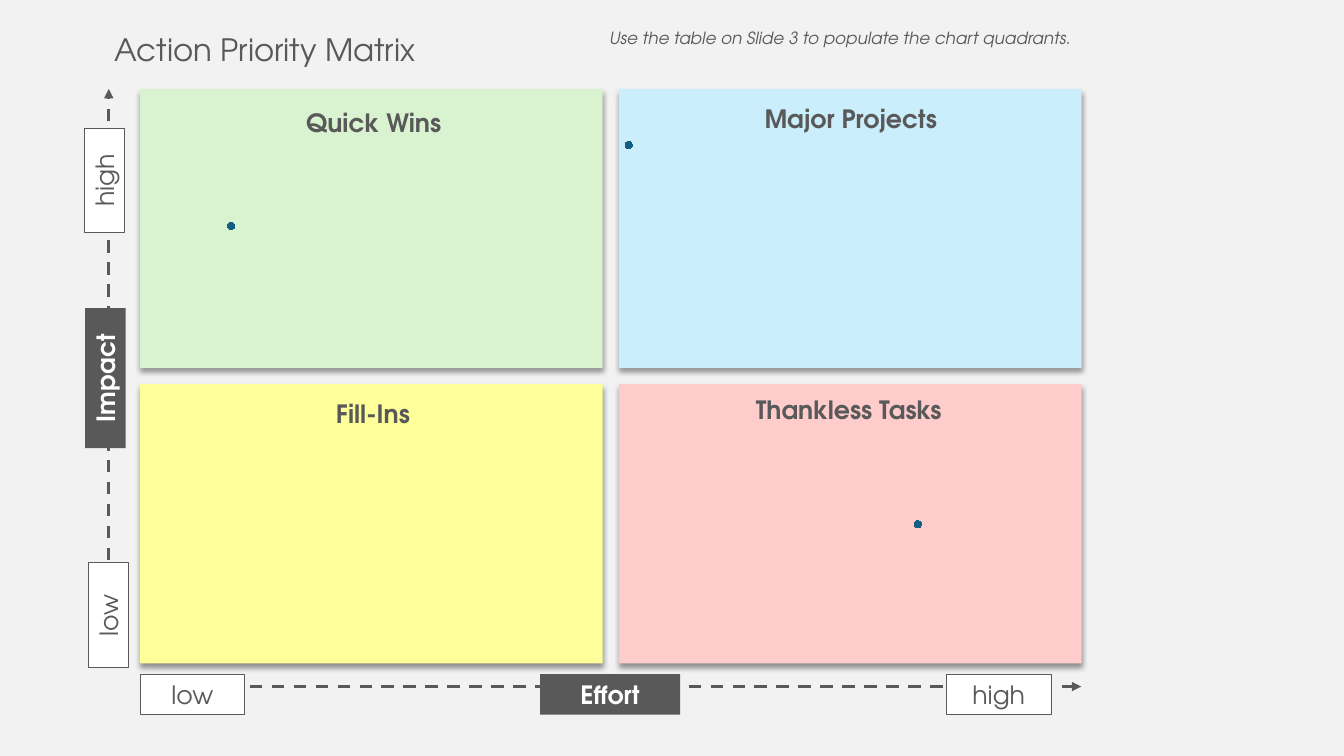
"""Build the Action Priority Matrix slide."""
from lxml import etree
from pptx import Presentation
from pptx.chart.data import XyChartData
from pptx.dml.color import RGBColor
from pptx.enum.chart import XL_CHART_TYPE, XL_MARKER_STYLE
from pptx.enum.dml import MSO_LINE
from pptx.enum.shapes import MSO_CONNECTOR, MSO_SHAPE
from pptx.enum.text import MSO_ANCHOR, MSO_AUTO_SIZE, PP_ALIGN
from pptx.oxml import parse_xml
from pptx.oxml.ns import qn
from pptx.util import Cm, Pt

LEFT, CENTER, RIGHT = PP_ALIGN.LEFT, PP_ALIGN.CENTER, PP_ALIGN.RIGHT
MIDDLE, GROW = MSO_ANCHOR.MIDDLE, MSO_AUTO_SIZE.SHAPE_TO_FIT_TEXT
RECT, STRAIGHT, DASH = MSO_SHAPE.RECTANGLE, MSO_CONNECTOR.STRAIGHT, MSO_LINE.DASH
SCATTER, CIRCLE = XL_CHART_TYPE.XY_SCATTER, XL_MARKER_STYLE.CIRCLE
FONT = "TeX Gyre Adventor"
COLORS = {
    "back": "F2F2F2", "dark": "595959", "white": "FFFFFF", "black": "000000",
    "green": "D9F2D0", "yellow": "FFFF99", "blue": "CAEEFB", "pink": "FFCCCC",
    "dot": "156082",
}
SHADOW = (
    '<a:effectLst xmlns:a="http://schemas.openxmlformats.org/drawingml/2006/main">'
    '<a:outerShdw blurRad="50800" dist="38100" dir="5400000" algn="t" rotWithShape="0">'
    f'<a:srgbClr val="{COLORS["black"]}"><a:alpha val="40000"/></a:srgbClr>'
    '</a:outerShdw></a:effectLst>'
)


def rgb(name):
    return RGBColor.from_string(COLORS[name])


def write(sp, text, align, color="dark", **formats):
    tf = sp.text_frame
    tf.word_wrap = True
    tf.auto_size = GROW
    p = tf.paragraphs[0]
    p.alignment = align
    r = p.add_run()
    r.text = text
    r.font.color.rgb = rgb(color)
    for name, value in {"name": FONT, "size": Pt(18), **formats}.items():
        setattr(r.font, name, value)


prs = Presentation()
prs.slide_width, prs.slide_height = Cm(33.87), Cm(19.05)
s = prs.slides.add_slide(prs.slide_layouts[6])
s.background.fill.solid()
s.background.fill.fore_color.rgb = rgb("back")

quadrants = [
    (3.53, 2.24, "green"), (3.53, 9.68, "yellow"),
    (15.6, 2.24, "blue"), (15.6, 9.68, "pink"),
]
for x, y, color in quadrants:
    sp = s.shapes.add_shape(RECT, Cm(x), Cm(y), Cm(11.66), Cm(7.04))
    sp.fill.solid()
    sp.fill.fore_color.rgb = rgb(color)
    sp.line.fill.background()
    sp._element.spPr.append(parse_xml(SHADOW))

texts = [
    (2.64, 0.64, 9.65, 1.19, "Action Priority Matrix", LEFT, {"size": Pt(22)}),
    (3.91, 2.59, 11.02, 1.02, "Quick Wins", CENTER, {"bold": True}),
    (15.93, 2.49, 11.02, 1.02, "Major Projects", CENTER, {"bold": True}),
    (3.89, 9.91, 11.02, 1.02, "Fill-Ins", CENTER, {"bold": True}),
    (15.88, 9.8, 11.02, 1.02, "Thankless Tasks", CENTER, {"bold": True}),
    (11.91, 0.58, 15.34, 0.76, "Use the table on Slide 3 to populate the chart quadrants.",
     RIGHT, {"size": Pt(12), "italic": True}),
]
for x, y, w, h, text, align, formats in texts:
    sp = s.shapes.add_textbox(Cm(x), Cm(y), Cm(w), Cm(h))
    write(sp, text, align, **formats)

for x1, y1, x2, y2 in [(2.74, 16.33, 2.74, 2.24), (3.53, 17.3, 27.25, 17.3)]:
    arrow = s.shapes.add_connector(STRAIGHT, Cm(x1), Cm(y1), Cm(x2), Cm(y2))
    arrow.line.color.rgb = rgb("dark")
    arrow.line.width = Pt(2.25)
    arrow.line.dash_style = DASH
    etree.SubElement(arrow.line._get_or_add_ln(), qn("a:tailEnd"), type="triangle")
    etree.SubElement(arrow._element.spPr, qn("a:effectLst"))

labels = [
    (13.61, 16.99, 3.53, 0, "Effort", True),
    (0.89, 9.02, 3.53, 270, "Impact", True),
    (1.42, 14.99, 2.64, 270, "low", False),
    (1.32, 4.04, 2.64, 270, "high", False),
    (3.53, 16.99, 2.64, 0, "low", False),
    (23.85, 16.99, 2.64, 0, "high", False),
]
for x, y, w, angle, text, is_name in labels:
    sp = s.shapes.add_shape(RECT, Cm(x), Cm(y), Cm(w), Cm(1.02))
    sp.rotation = angle
    sp.shadow.inherit = False
    sp.fill.solid()
    sp.fill.fore_color.rgb = rgb("dark" if is_name else "white")
    if is_name:
        sp.line.fill.background()
    else:
        sp.line.color.rgb = rgb("dark")
        sp.line.width = Pt(0.75)
    sp.text_frame.vertical_anchor = MIDDLE
    write(sp, text, CENTER, "white" if is_name else "dark", bold=is_name)

data = XyChartData()
points = data.add_series("Series 1")
for effort, impact in [(0.7, 84), (1.8, 100), (2.6, 25)]:
    points.add_data_point(effort, impact)
chart = s.shapes.add_chart(SCATTER, Cm(3.53), Cm(2.24), Cm(23.72), Cm(14.45), data).chart
chart.has_legend = False
chart.has_title = False
chart.font.name = "Calibri"
chart.font.size = Pt(10)
chart.font.color.rgb = rgb("black")
for axis, low, high in [(chart.category_axis, 0.5, 3), (chart.value_axis, 0, 110)]:
    axis.minimum_scale, axis.maximum_scale = low, high
    axis.has_major_gridlines = False
    axis.visible = False
plot = chart.plots[0]
plot.vary_by_categories = False
series = plot.series[0]
series.smooth = False
series.format.line.fill.background()
series.marker.style = CIRCLE
series.marker.size = 5
series.marker.format.fill.solid()
series.marker.format.fill.fore_color.rgb = rgb("dot")
series.marker.format.line.color.rgb = rgb("dot")

area = chart._chartSpace.chart.plotArea
for old in area.findall(qn("c:layout")):
    area.remove(old)
layout = etree.Element(qn("c:layout"))
manual = etree.SubElement(layout, qn("c:manualLayout"))
for tag, value in [("layoutTarget", "inner"), ("xMode", "edge"), ("yMode", "edge"),
                   ("x", "0.02"), ("y", "0.01"), ("w", "0.96"), ("h", "0.97")]:
    etree.SubElement(manual, qn(f"c:{tag}"), val=value)
area.insert(0, layout)

prs.save("out.pptx")
